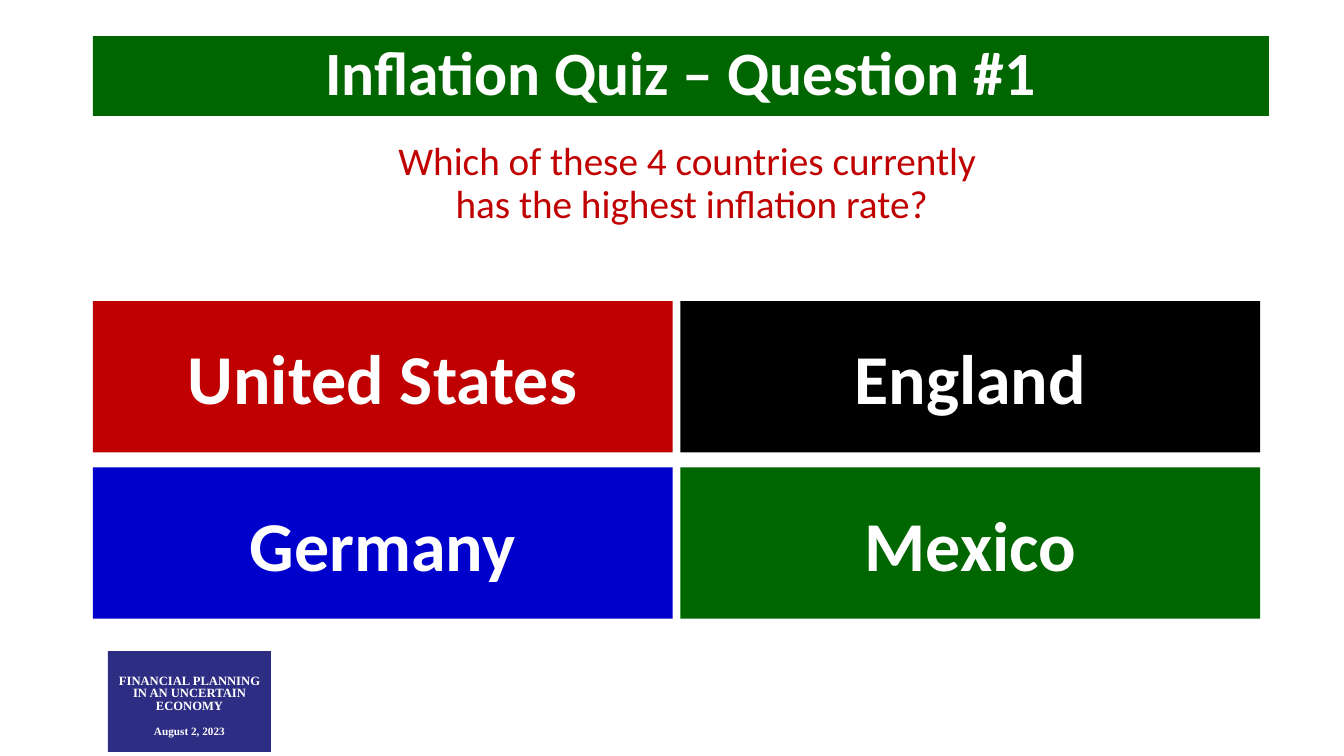
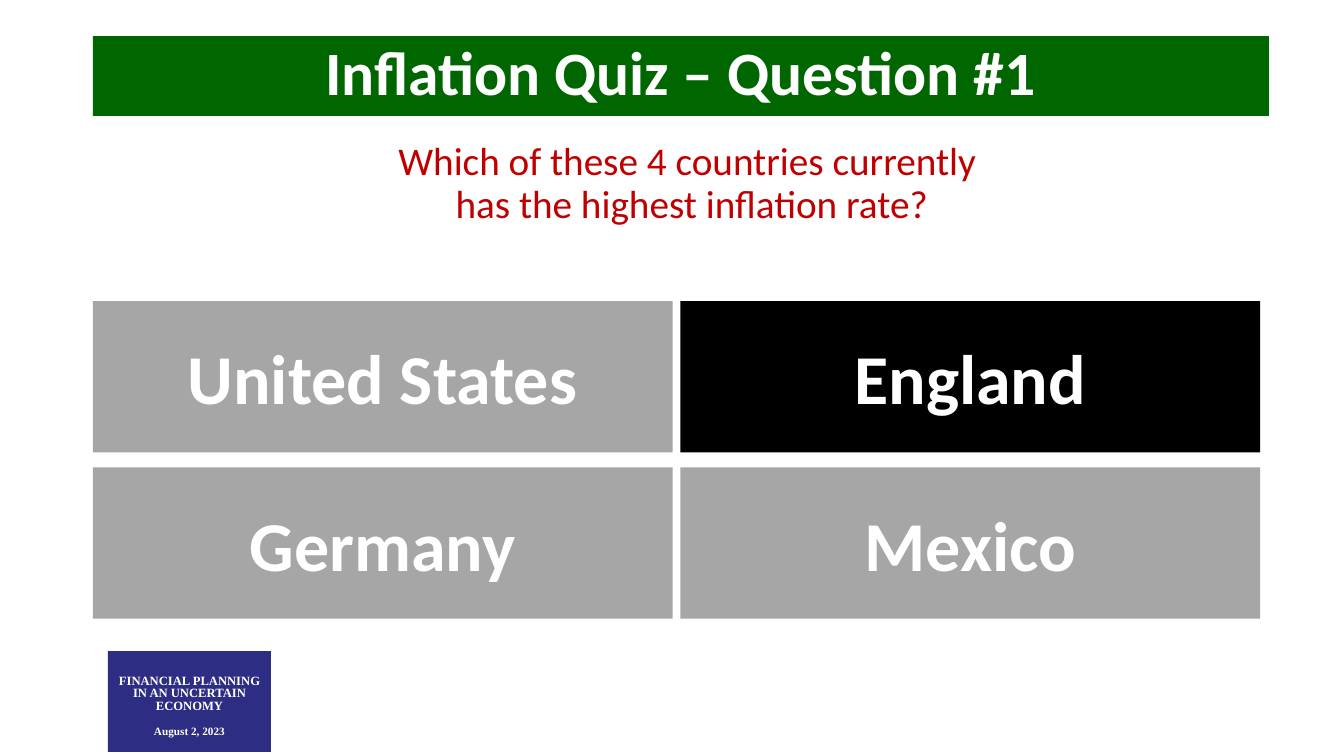
import pptx
import pptx.dml.color
import pptx.enum.shapes
import pptx.enum.text
import pptx.util

Cm, Pt = pptx.util.Cm, pptx.util.Pt
RGBColor = pptx.dml.color.RGBColor
ANCHOR = pptx.enum.text.MSO_ANCHOR

WHITE = RGBColor(0xFF, 0xFF, 0xFF)
BLACK = RGBColor(0x00, 0x00, 0x00)
GREEN = RGBColor(0x00, 0x66, 0x00)
RED = RGBColor(0xC0, 0x00, 0x00)
BLUE = RGBColor(0x00, 0x00, 0xCC)
GRAY = RGBColor(0xA6, 0xA6, 0xA6)
NAVY = RGBColor(0x2D, 0x2D, 0x83)

# Content
TITLE = "Inflation Quiz – Question #1"
QUESTION = "Which of these 4 countries currently \nhas the highest inflation rate?"
COUNTRIES = [
    ("United States", RED),
    ("England", BLACK),
    ("Germany", BLUE),
    ("Mexico", GREEN),
]
ANSWER = "England"
EVENT = "FINANCIAL PLANNING IN AN UNCERTAIN ECONOMY"
EVENT_DATE = "August 2, 2023"

# Text styles: font values and paragraph values
TITLE_STYLE = (
    {"name": "Calibri", "size": Pt(44), "bold": True},
    {"line_spacing": 0.9},
)
QUESTION_STYLE = (
    {"name": "Calibri", "size": Pt(28), "bold": False},
    {"line_spacing": 0.9},
)
COUNTRY_STYLE = (
    {"name": "Calibri", "size": Pt(50), "bold": True},
    {"line_spacing": 1.0},
)
EVENT_STYLE = (
    {"name": "Times New Roman", "size": Pt(9), "bold": True},
    {"line_spacing": 0.8},
)
DATE_STYLE = (
    {"name": "Times New Roman", "size": Pt(8), "bold": True},
    {"line_spacing": 0.8, "space_before": Pt(10)},
)

# Places
LEFT = Cm(2.34)
TITLE_BOX = (LEFT, Cm(0.91), Cm(29.64), Cm(2.01))
QUESTION_BOX = (LEFT, Cm(3.45), Cm(30.18), Cm(3))
BADGE_BOX = (Cm(2.72), Cm(16.41), Cm(4.11), Cm(2.54))
GRID_TOP = Cm(7.59)
TILE_WIDTH, TILE_HEIGHT = Cm(14.61), Cm(3.81)
GAP_X, GAP_Y = Cm(0.2), Cm(0.38)
COLUMNS = 2


def set_values(target, values):
    for name, value in values.items():
        setattr(target, name, value)


def write(shape, lines, color=WHITE, anchor=ANCHOR.MIDDLE):
    """Fill a shape with centred paragraphs of (text, style)."""
    frame = shape.text_frame
    set_values(frame, {
        "word_wrap": True,
        "auto_size": pptx.enum.text.MSO_AUTO_SIZE.NONE,
        "vertical_anchor": anchor,
    })
    for index, (text, (font, spacing)) in enumerate(lines):
        paragraph = frame.add_paragraph() if index else frame.paragraphs[0]
        paragraph.text = text
        paragraph.alignment = pptx.enum.text.PP_ALIGN.CENTER
        set_values(paragraph, spacing)
        for run in paragraph.runs:
            set_values(run.font, font)
            run.font.color.rgb = color


def paint(shape, color):
    shape.fill.solid()
    shape.fill.fore_color.rgb = color


def add_panel(slide, box, color, lines):
    shape = slide.shapes.add_shape(pptx.enum.shapes.MSO_SHAPE.RECTANGLE, *box)
    shape.shadow.inherit = False
    shape.line.fill.background()
    paint(shape, color)
    write(shape, lines)
    return shape


def add_quiz_slide(presentation, reveal):
    slide = presentation.slides.add_slide(presentation.slide_layouts[5])

    # Title band
    title = slide.shapes.title
    set_values(title, dict(zip(("left", "top", "width", "height"), TITLE_BOX)))
    paint(title, GREEN)
    write(title, [(TITLE, TITLE_STYLE)])

    # Question
    question = slide.shapes.add_textbox(*QUESTION_BOX)
    write(question, [(QUESTION, QUESTION_STYLE)], RED, ANCHOR.TOP)

    # Answer tiles; the reveal grays out the wrong ones
    for index, (country, color) in enumerate(COUNTRIES):
        row, column = divmod(index, COLUMNS)
        box = (LEFT + column * (TILE_WIDTH + GAP_X),
               GRID_TOP + row * (TILE_HEIGHT + GAP_Y), TILE_WIDTH, TILE_HEIGHT)
        shown = GRAY if reveal and country != ANSWER else color
        add_panel(slide, box, shown, [(country, COUNTRY_STYLE)])

    # Event badge
    badge = add_panel(slide, BADGE_BOX, NAVY,
                      [(EVENT, EVENT_STYLE), (EVENT_DATE, DATE_STYLE)])
    badge.text_frame.margin_top = Cm(0.38)


def main():
    presentation = pptx.Presentation()
    presentation.slide_width = Cm(33.87)
    presentation.slide_height = Cm(19.05)
    for reveal in (False, True):
        add_quiz_slide(presentation, reveal)
    presentation.save("out.pptx")


if __name__ == "__main__":
    main()
